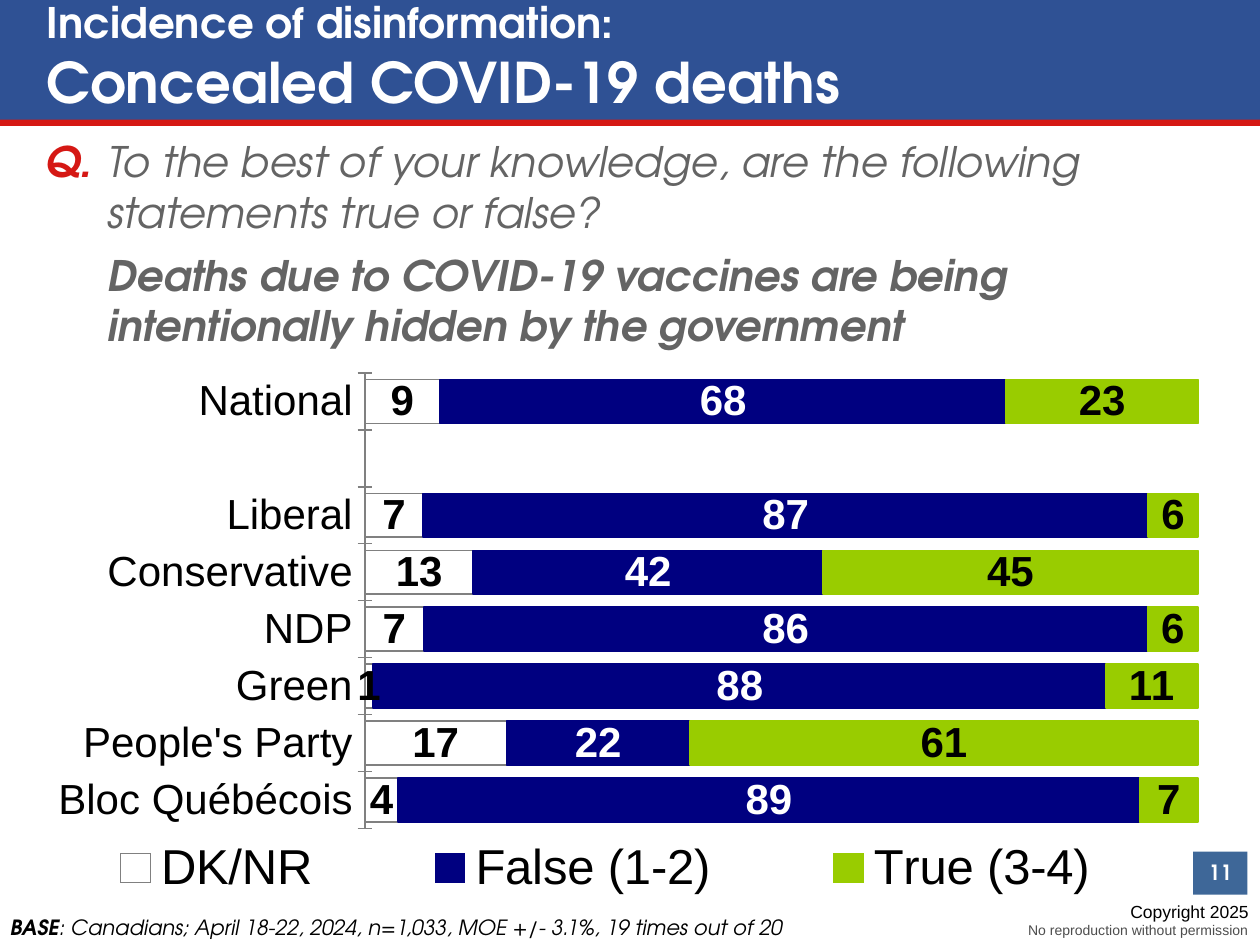
from lxml import etree
from pptx import Presentation, util as u
from pptx.chart.data import CategoryChartData
from pptx.dml.color import RGBColor
from pptx.enum import chart as ch, shapes, text
from pptx.oxml import parse_xml
from pptx.oxml.ns import nsdecls, qn

HEAD, BODY = "TeX Gyre Adventor", "Arial"
WHITE, BLACK, GREY, RED = "FFFFFF", "000000", "646464", "D51814"


def colour(value):
    return RGBColor.from_string(value)


def style_font(font, size, face=BODY, color=BLACK, bold=False, italic=False):
    font.size, font.name = u.Pt(size), face
    font.bold, font.italic = bold, italic
    font.color.rgb = colour(color)


def add_text(paragraph, words, **style):
    for number, line in enumerate(words.split("\n")):
        if number:
            paragraph.add_line_break()
        if line:
            run = paragraph.add_run()
            run.text = line
            style_font(run.font, **style)


def set_layout(parent, before, x, y, w, h, inner=False):
    for old in parent.findall(qn("c:layout")):
        parent.remove(old)
    target = '<c:layoutTarget val="inner"/>' if inner else ""
    sizes = "".join(f'<c:{tag} val="{value}"/>' for tag, value in zip("xywh", (x, y, w, h)))
    layout = parse_xml(
        f'<c:layout {nsdecls("c")}><c:manualLayout>{target}'
        f'<c:xMode val="edge"/><c:yMode val="edge"/>{sizes}</c:manualLayout></c:layout>'
    )
    before.addprevious(layout)


class Deck:
    def __init__(self, width, height):
        self.prs = Presentation()
        self.prs.slide_width, self.prs.slide_height = u.Inches(width), u.Inches(height)
        self.slide = self.prs.slides.add_slide(self.prs.slide_layouts[6])

    def box(self, at, fill):
        rect = self.slide.shapes.add_shape(shapes.MSO_SHAPE.RECTANGLE, *map(u.Inches, at))
        rect.shadow.inherit = False
        rect.fill.solid()
        rect.fill.fore_color.rgb = colour(fill)
        rect.line.fill.background()

    def text(self, at, *paragraphs, align="LEFT", anchor="TOP", side=0.09,
             wrap=True, hanging=0, gap=0):
        frame = self.slide.shapes.add_textbox(*map(u.Inches, at)).text_frame
        frame.word_wrap = wrap
        frame.vertical_anchor = getattr(text.MSO_ANCHOR, anchor)
        frame.margin_left = frame.margin_right = u.Inches(side)
        frame.margin_top = frame.margin_bottom = u.Inches(0.05)
        for number, runs in enumerate(paragraphs):
            paragraph = frame.add_paragraph() if number else frame.paragraphs[0]
            paragraph.alignment = getattr(text.PP_ALIGN, align)
            if number:
                paragraph.space_before = u.Pt(gap)
            if hanging:
                properties = paragraph._p.get_or_add_pPr()
                properties.set("marL", str(u.Inches(hanging)))
                properties.set("indent", str(0 if number else -u.Inches(hanging)))
            for words, style in runs:
                add_text(paragraph, words, **style)

    def stacked_bars(self, at, categories, answers):
        data = CategoryChartData(number_format="0")
        data.categories = categories
        for name, values, *_ in answers:
            data.add_series(name, values)
        chart = self.slide.shapes.add_chart(
            ch.XL_CHART_TYPE.BAR_STACKED_100, *map(u.Inches, at), data).chart
        chart.has_title = False
        style_font(chart.font, 24)
        plot = chart.plots[0]
        plot.gap_width, plot.overlap, plot.vary_by_categories = 30, 100, False
        for series, (_, _, fill, edge, label) in zip(plot.series, answers):
            series.format.fill.solid()
            series.format.fill.fore_color.rgb = colour(fill)
            series.format.line.color.rgb = colour(edge)
            series.format.line.width = u.Pt(1)
            series.invert_if_negative = False
            labels = series.data_labels
            labels.show_value = True
            labels.number_format, labels.number_format_is_linked = "0", False
            labels.position = ch.XL_LABEL_POSITION.CENTER
            style_font(labels.font, 24, color=label, bold=True)
        parties = chart.category_axis
        style_font(parties.tick_labels.font, 24)
        parties.major_tick_mark = ch.XL_TICK_MARK.CROSS
        parties.format.line.color.rgb = colour("808080")
        shares = chart.value_axis
        shares.minimum_scale, shares.maximum_scale, shares.major_unit = 0, 1, 0.1
        shares.has_major_gridlines = False
        shares.visible = False
        chart.has_legend = True
        legend = chart.legend
        legend.position = ch.XL_LEGEND_POSITION.BOTTOM
        legend.include_in_layout = False
        style_font(legend.font, 28)
        overlay = legend._element.find(qn("c:overlay"))
        set_layout(legend._element, overlay, 0, 0.9, 0.96, 0.09)
        area = plot._element.getparent()
        set_layout(area, plot._element, 0.285, 0.307, 0.676, 0.587, inner=True)

    def save(self):
        self.prs.save("out.pptx")


def main():
    deck = Deck(10, 7.5)
    deck.text((8.04, 7.1, 1.96, 0.4),
              [("Copyright 2025\n", dict(size=10)),
               ("No reproduction without permission", dict(size=8, color="4D4D4D"))],
              align="RIGHT", wrap=False)
    deck.box((9.47, 6.76, 0.43, 0.34), "3E6798")
    deck.text((9.41, 6.68, 0.55, 0.39),
              [("11", dict(size=12, face=HEAD, color=WHITE, bold=True))],
              align="CENTER", anchor="BOTTOM", side=0.11)

    parties = ["Bloc Québécois", "People's Party", "Green", "NDP",
               "Conservative", "Liberal", "", "National"]
    answers = [
        ("DK/NR", (4, 17, 1, 7, 13, 7, None, 9), WHITE, "808080", BLACK),
        ("False (1-2)", (89, 22, 88, 86, 42, 87, None, 68), "000080", "000080", WHITE),
        ("True (3-4)", (7, 61, 11, 6, 45, 6, None, 23), "99CC00", "99CC00", BLACK),
    ]
    deck.stacked_bars((0.11, 1.07, 9.78, 6.16), parties, answers)

    note = dict(size=12, face=HEAD, italic=True)
    deck.text((-0.01, 7.21, 6.38, 0.29),
              [("BASE", dict(note, bold=True)),
               (": Canadians; April 18-22, 2024, n=1,033, MOE +/- 3.1%, 19 times out of 20", note)],
              wrap=False)

    deck.box((0, 0, 10, 0.96), "2F5194")
    deck.box((-0.01, 0.95, 10.03, 0.05), RED)
    title = dict(face=HEAD, color=WHITE, bold=True)
    deck.text((0.27, -0.08, 6.58, 1.04),
              [("Incidence of disinformation:\n", dict(title, size=24)),
               ("Concealed COVID-19 deaths", dict(title, size=32))],
              anchor="MIDDLE", side=0.1, wrap=False)

    question = dict(size=24, face=HEAD, color=GREY, italic=True)
    deck.text((0.27, 1.03, 9.73, 1.81),
              [("Q.\t", dict(question, color=RED, bold=True)),
               ("To the best of your knowledge, are the following statements true or false?", question)],
              [("Deaths due to COVID-19 vaccines are being intentionally hidden by the government",
                dict(question, bold=True))],
              hanging=0.49, gap=7)
    deck.save()


if __name__ == "__main__":
    main()
